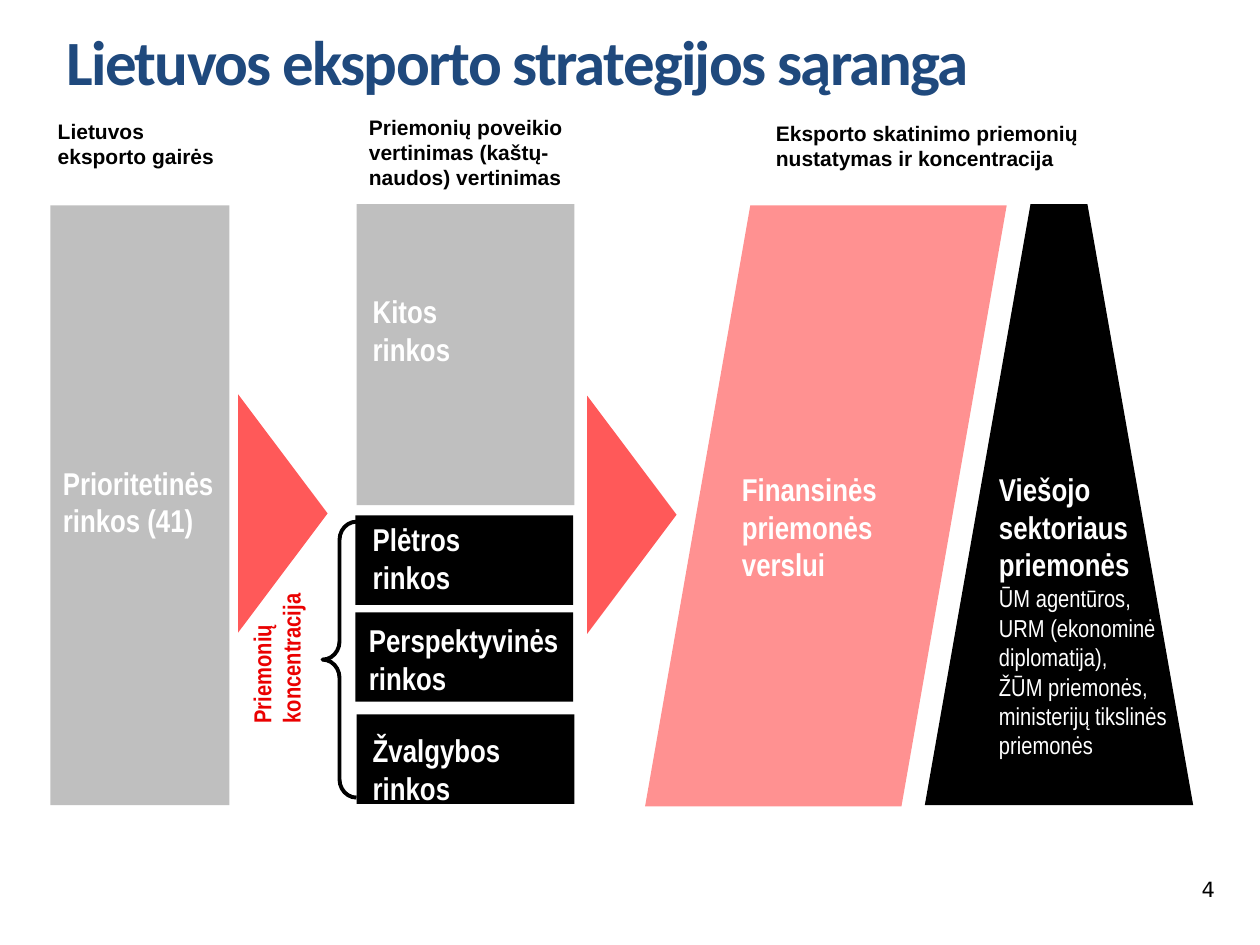
from dataclasses import dataclass

from pptx import Presentation
from pptx.dml.color import RGBColor
from pptx.enum.shapes import MSO_SHAPE
from pptx.enum.text import MSO_ANCHOR, MSO_AUTO_SIZE, PP_ALIGN
from pptx.util import Emu, Pt

SCALE = 9144


@dataclass(frozen=True)
class Theme:
    title: str = "1F497D"
    ink: str = "000000"
    light: str = "FFFFFF"
    grey: str = "BFBFBF"
    arrow: str = "FF5959"
    pink: str = "FF9191"
    accent: str = "EA0000"
    title_size: int = 36
    label_size: int = 18
    note_size: int = 14
    head_size: int = 12
    title_font: str = "Calibri"
    head_font: str = "Arial"
    label_font: str = "Arial Narrow"
    number_font: str = "DejaVu Sans"


T = Theme()


def px(*values):
    return [Emu(v * SCALE) for v in values]


def style(p, size, font, color, bold=True):
    for r in p.runs:
        r.font.size = Pt(size)
        r.font.name = font
        r.font.bold = bold
        r.font.color.rgb = RGBColor.from_string(color)


def add_text(s, box, text, size=T.label_size, font=T.label_font, color=T.light, bold=True):
    sp = s.shapes.add_textbox(*px(*box))
    tf = sp.text_frame
    tf.word_wrap = True
    tf.auto_size = MSO_AUTO_SIZE.SHAPE_TO_FIT_TEXT
    tf.text = text
    for p in tf.paragraphs:
        style(p, size, font, color, bold)
    return sp


def add_block(s, kind, box, fill, *adjustments):
    sp = s.shapes.add_shape(kind, *px(*box))
    sp.shadow.inherit = False
    sp.fill.solid()
    sp.fill.fore_color.rgb = RGBColor.from_string(fill)
    sp.line.fill.background()
    for i, value in enumerate(adjustments):
        sp.adjustments[i] = value
    return sp


def add_title(s, box, text):
    sp = s.shapes.title
    sp.left, sp.top, sp.width, sp.height = px(*box)
    tf = sp.text_frame
    tf.text = text
    tf.word_wrap = True
    tf.auto_size = MSO_AUTO_SIZE.SHAPE_TO_FIT_TEXT
    tf.vertical_anchor = MSO_ANCHOR.TOP
    p = tf.paragraphs[0]
    p.alignment = PP_ALIGN.LEFT
    style(p, T.title_size, T.title_font, T.title)
    for r in p.runs:
        r.font._element.set("spc", "-100")


def add_heading(s, box, text):
    add_text(s, box, text, T.head_size, T.head_font, T.ink)


def add_arrow(s, box):
    add_block(s, MSO_SHAPE.RIGHT_ARROW, box, T.arrow, 0.5, 1)


def add_priority_markets(s, box):
    x, y, w, h = box
    add_block(s, MSO_SHAPE.RECTANGLE, box, T.grey)
    add_text(s, (x, y + 200, w + 19, 71), "Prioritetinės rinkos (41)")


def add_market_groups(s, box):
    x, y, w, h = box
    add_block(s, MSO_SHAPE.RECTANGLE, (x, y, w, 239), T.grey)
    add_text(s, (x + 3, y + 65, 133, 71), "Kitos rinkos")
    groups = [
        ("Plėtros rinkos", -1, 247, 3, 246, 148),
        ("Perspektyvinės rinkos", -1, 324, 0, 326, 173),
        ("Žvalgybos rinkos", 0, 405, 3, 413, 133),
    ]
    for text, dx, dy, text_dx, text_dy, text_w in groups:
        add_block(s, MSO_SHAPE.RECTANGLE, (x + dx, y + dy, w, 71), T.ink)
        add_text(s, (x + text_dx, y + text_dy, text_w, 71), text)


def add_concentration(s, box):
    x, y, w, h = box
    brace = s.shapes.add_shape(MSO_SHAPE.LEFT_BRACE, *px(x + w - 27, y, 27, h))
    brace.shadow.inherit = False
    brace.fill.background()
    brace.line.color.rgb = RGBColor.from_string(T.ink)
    brace.line.width = Pt(2.25)
    brace.adjustments[0] = 0.535
    brace.adjustments[1] = 0.5
    label = add_text(s, (x, y + 75, 133, 57), "Priemonių koncentracija",
                     T.note_size, color=T.accent)
    label.rotation = 270


def add_measures(s, box):
    x, y, w, h = box
    add_block(s, MSO_SHAPE.TRAPEZOID, (x + w - 213, y, 213, h), T.ink, 0.394)
    add_block(s, MSO_SHAPE.PARALLELOGRAM, (x, y + 1, 287, h), T.pink, 0.291)
    add_text(s, (x + 67, y + 206, 161, 101), "Finansinės priemonės verslui")
    sp = add_text(
        s, (x + 271, y + 206, 161, 242),
        "Viešojo sektoriaus priemonės\n"
        "ŪM agentūros, URM (ekonominė diplomatija),\n"
        "ŽŪM priemonės,\n"
        "ministerijų tikslinės priemonės",
    )
    for p in sp.text_frame.paragraphs[1:]:
        style(p, T.note_size, T.label_font, T.light, False)


def add_number(s, box, text):
    sp = add_text(s, box, text, T.head_size, T.number_font, T.ink, False)
    sp.text_frame.auto_size = MSO_AUTO_SIZE.NONE
    sp.text_frame.paragraphs[0].alignment = PP_ALIGN.RIGHT


def main():
    prs = Presentation()
    prs.slide_width, prs.slide_height = px(1000, 750)
    s = prs.slides.add_slide(prs.slide_layouts[5])
    add_title(s, (43, 13, 882, 71), "Lietuvos eksporto strategijos sąranga")
    add_heading(s, (36, 89, 145, 50), "Lietuvos eksporto gairės")
    add_heading(s, (283, 86, 210, 71),
                "Priemonių poveikio vertinimas (kaštų-naudos) vertinimas")
    add_heading(s, (606, 91, 282, 50),
                "Eksporto skatinimo priemonių nustatymas ir koncentracija")
    add_priority_markets(s, (40, 163, 142, 476))
    add_arrow(s, (189, 313, 71, 189))
    add_market_groups(s, (283, 162, 173, 476))
    add_concentration(s, (153, 414, 130, 219))
    add_arrow(s, (466, 314, 71, 189))
    add_measures(s, (512, 162, 435, 477))
    add_number(s, (852, 691, 122, 36), "4")
    prs.save("out.pptx")


if __name__ == "__main__":
    main()
